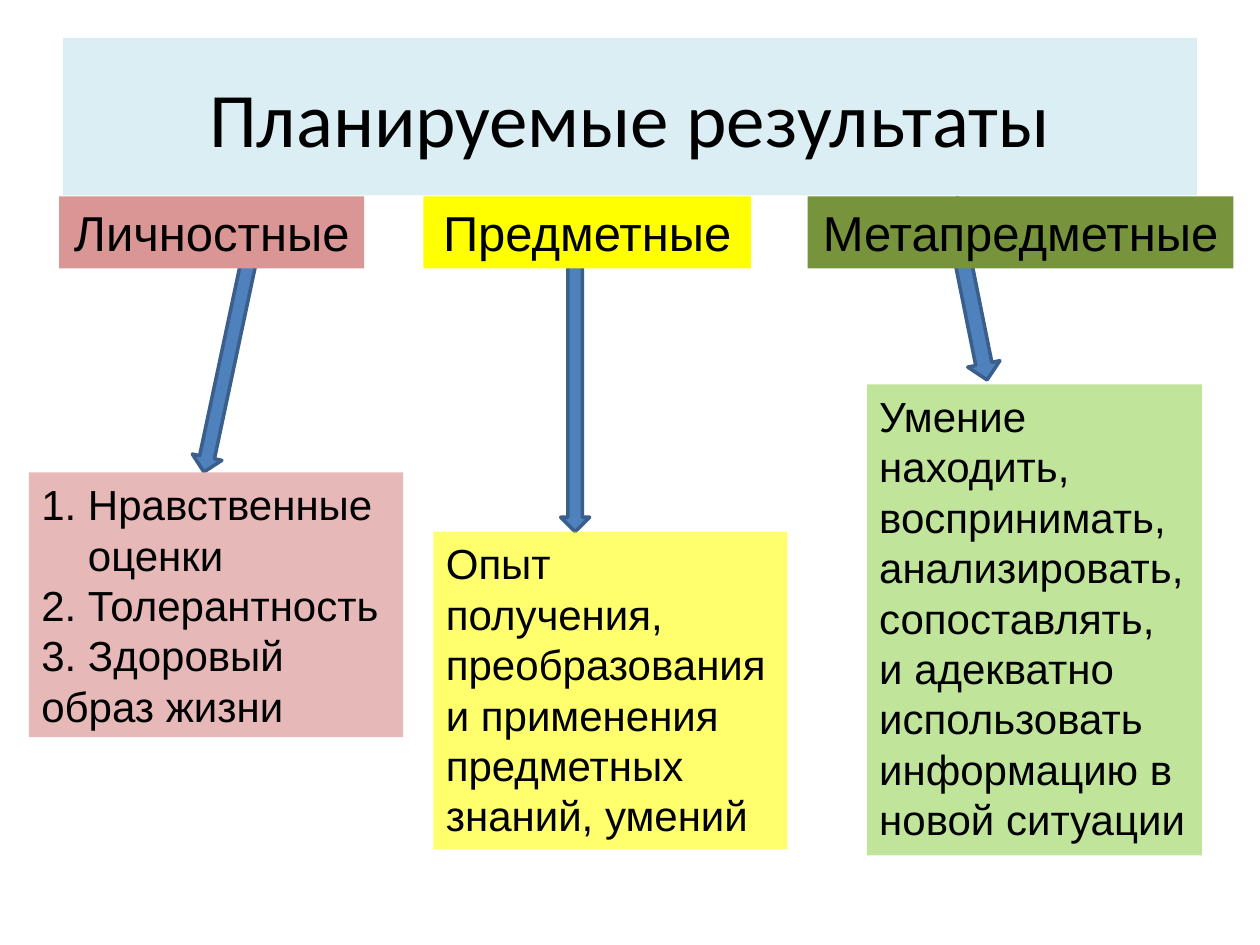
from pptx import Presentation
from pptx.dml.color import RGBColor
from pptx.enum.shapes import MSO_SHAPE
from pptx.enum.text import MSO_ANCHOR, MSO_AUTO_SIZE, PP_ALIGN
from pptx.oxml.ns import qn
from pptx.util import Inches, Pt
from lxml import etree

CENTER, LEFT = PP_ALIGN.CENTER, PP_ALIGN.LEFT
MIDDLE = MSO_ANCHOR.MIDDLE
GROW = MSO_AUTO_SIZE.SHAPE_TO_FIT_TEXT
DOWN_ARROW = MSO_SHAPE.DOWN_ARROW
HANGING_INDENT = Inches(0.37)


def paint(fill, color, opacity=100):
    fill.solid()
    fill.fore_color.rgb = RGBColor.from_string(color)
    if opacity < 100:
        srgb = fill._xPr.find(".//" + qn("a:srgbClr"))
        etree.SubElement(srgb, qn("a:alpha")).set("val", str(opacity * 1000))


def write(frame, lines, size, font="Arial", align=LEFT, wrap=True, indented=()):
    """Fill a text frame, one paragraph per line; indented holds line numbers."""
    frame.word_wrap = wrap
    for number, line in enumerate(lines):
        paragraph = frame.paragraphs[0] if number == 0 else frame.add_paragraph()
        paragraph.text = line
        paragraph.alignment = align
        if number in indented:
            paragraph._p.get_or_add_pPr().set("marL", str(HANGING_INDENT))
        for run in paragraph.runs:
            run.font.size = Pt(size)
            run.font.name = font
            run.font.color.rgb = RGBColor.from_string("000000")


prs = Presentation()
prs.slide_width, prs.slide_height = Inches(10), Inches(7.5)
slide = prs.slides.add_slide(prs.slide_layouts[5])

title = slide.shapes.title
title.left, title.top = Inches(0.5), Inches(0.3)
title.width, title.height = Inches(9), Inches(1.25)
paint(title.fill, "DBEEF4")
title.text_frame.vertical_anchor = MIDDLE
write(title.text_frame, ["Планируемые результаты"], 44, font="Calibri", align=CENTER)

# Left, top, width, height, rotation
arrows = [
    (1.72, 1.64, 0.24, 2.13, 12),
    (4.45, 1.64, 0.23, 2.58, 0),
    (7.56, 1.57, 0.26, 1.46, 348.6),
]
for *box, rotation in arrows:
    arrow = slide.shapes.add_shape(DOWN_ARROW, *map(Inches, box))
    arrow.rotation = rotation
    arrow.shadow.inherit = False
    paint(arrow.fill, "4F81BD")
    paint(arrow.line.fill, "3A5F8C")
    arrow.line.width = Pt(2)

# Name, left, width, colour, wrap
headings = [
    ("Личностные", 0.47, 2.42, "D99694", False),
    ("Предметные", 3.36, 2.6, "FFFF00", True),
    ("Метапредметные", 6.41, 3.38, "77933C", False),
]
for name, left, width, color, wrap in headings:
    heading = slide.shapes.add_textbox(Inches(left), Inches(1.56), Inches(width), Inches(0.57))
    heading.text_frame.auto_size = GROW
    paint(heading.fill, color)
    write(heading.text_frame, [name], 28, align=CENTER, wrap=wrap)

# Box, colour, opacity, lines, indented lines
results = [
    ((0.23, 3.75, 2.97, 2.1), "E6B9B8", 100,
     ["1. Нравственные", "оценки", "2. Толерантность", "3. Здоровый\vобраз жизни"], (1,)),
    ((3.44, 4.22, 2.81, 2.52), "FFFF00", 57,
     ["Опыт получения, преобразования", "и применения", "предметных знаний, умений"], ()),
    ((6.88, 3.05, 2.66, 3.74), "92D050", 57,
     ["Умение", "находить,", "воспринимать,", "анализировать,", "сопоставлять,",
      "и адекватно", "использовать", "информацию в новой ситуации"], ()),
]
for box, color, opacity, lines, indented in results:
    result = slide.shapes.add_textbox(*map(Inches, box))
    result.text_frame.auto_size = GROW
    paint(result.fill, color, opacity)
    write(result.text_frame, lines, 24, indented=indented)

prs.save("out.pptx")
